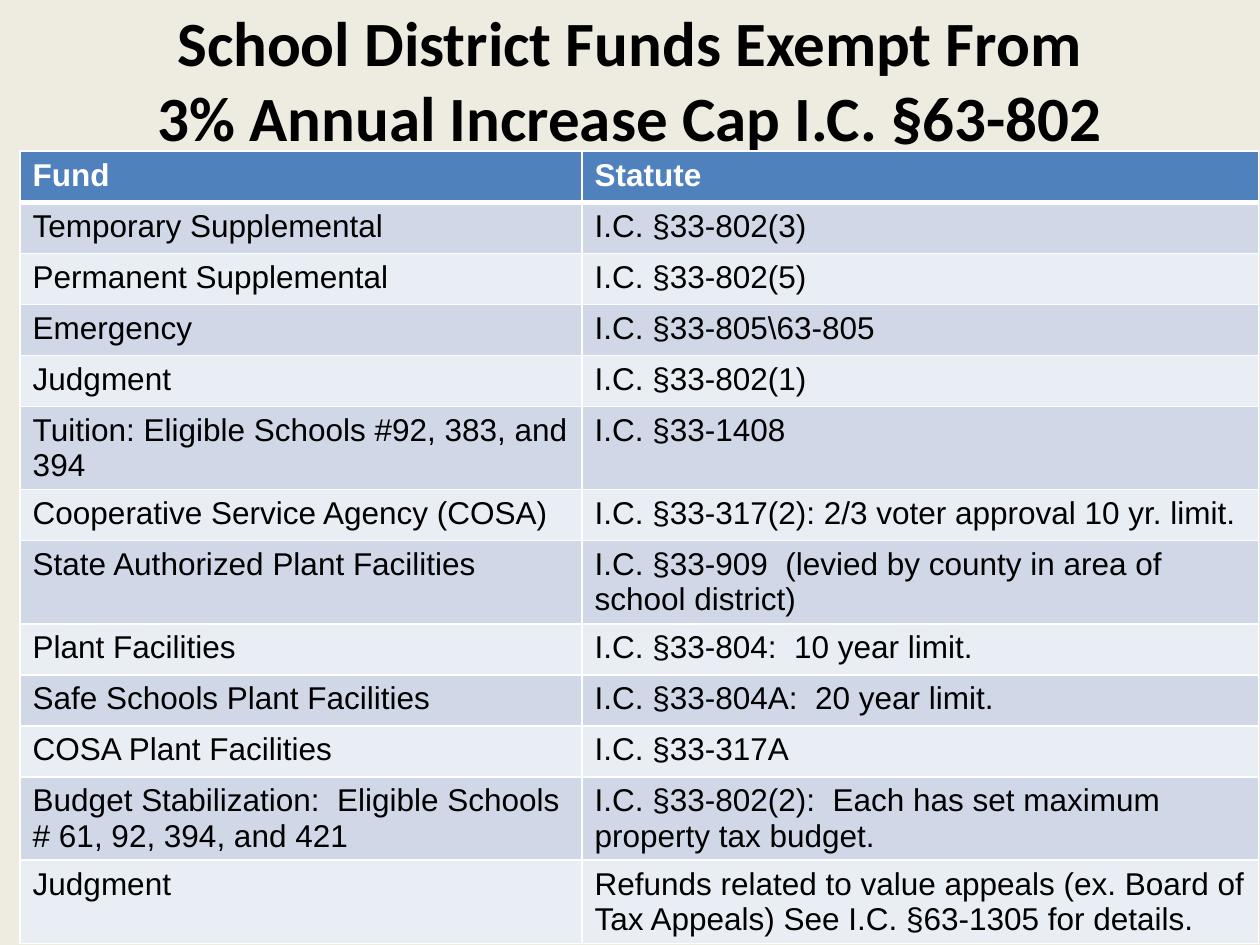
from lxml.etree import SubElement
from pptx import Presentation
from pptx.dml.color import RGBColor
from pptx.enum.text import MSO_ANCHOR, PP_ALIGN
from pptx.oxml.ns import qn
from pptx.util import Inches, Pt

BACKGROUND = RGBColor(0xEE, 0xEC, 0xE1)
BLACK = RGBColor(0x00, 0x00, 0x00)
WHITE = RGBColor(0xFF, 0xFF, 0xFF)
HEADER_BLUE = RGBColor(0x4F, 0x81, 0xBD)
BANDS = (RGBColor(0xE9, 0xED, 0xF4), RGBColor(0xD0, 0xD8, 0xE8))

TITLE_FONT = {"name": "Calibri", "size": Pt(36), "bold": True}
HEADER_FONT = {"name": "Arial", "size": Pt(18), "bold": True}
BODY_FONT = {"name": "Arial", "size": Pt(18), "bold": False}

TITLE_LINES = ("School District Funds Exempt From", "3% Annual Increase Cap I.C. §63-802")
FUNDS = (
    ("Fund", "Statute"),
    ("Temporary Supplemental", "I.C. §33-802(3)"),
    ("Permanent Supplemental", "I.C. §33-802(5)"),
    ("Emergency", r"I.C. §33-805\63-805"),
    ("Judgment", "I.C. §33-802(1)"),
    ("Tuition: Eligible Schools #92, 383, and 394", "I.C. §33-1408"),
    ("Cooperative Service Agency (COSA)", "I.C. §33-317(2): 2/3 voter approval 10 yr. limit."),
    ("State Authorized Plant Facilities",
     "I.C. §33-909  (levied by county in area of school district)"),
    ("Plant Facilities", "I.C. §33-804:  10 year limit."),
    ("Safe Schools Plant Facilities", "I.C. §33-804A:  20 year limit."),
    ("COSA Plant Facilities", "I.C. §33-317A"),
    ("Budget Stabilization:  Eligible Schools # 61, 92, 394, and 421",
     "I.C. §33-802(2):  Each has set maximum property tax budget."),
    ("Judgment",
     "Refunds related to value appeals (ex. Board of Tax Appeals) "
     "See I.C. §63-1305 for details."),
)
COLUMN_WIDTHS = (Inches(4.46), Inches(5.37))
ROW_HEIGHT = Inches(5.27) // len(FUNDS)
TWO_LINE_ROW_HEIGHT = Inches(0.66)
TWO_LINE_ROWS = (5, 7, 11, 12)
TWO_LINE_BOTTOM_MARGIN = Inches(0.01)


def format_font(font, values, color):
    for name, value in values.items():
        setattr(font, name, value)
    font.color.rgb = color


def add_title(slide, left, top, width, height):
    frame = slide.shapes.add_textbox(left, top, width, height).text_frame
    frame.word_wrap = True
    frame.vertical_anchor = MSO_ANCHOR.MIDDLE
    paragraph = frame.paragraphs[0]
    paragraph.alignment = PP_ALIGN.CENTER
    for index, line in enumerate(TITLE_LINES):
        if index:
            paragraph.add_line_break()
        run = paragraph.add_run()
        run.text = line
        format_font(run.font, TITLE_FONT, BLACK)


def set_borders(cell, widths):
    """Draw white borders; widths maps a side (L, R, T, B) to its line width."""
    properties = cell._tc.get_or_add_tcPr()
    for side, width in widths.items():
        line = SubElement(properties, qn(f"a:ln{side}"), w=str(width))
        fill = SubElement(line, qn("a:solidFill"))
        SubElement(fill, qn("a:srgbClr"), val=str(WHITE))


def add_funds_table(slide, left, top, width, height):
    graphic_frame = slide.shapes.add_table(
        len(FUNDS), len(COLUMN_WIDTHS), left, top, width, height)
    table = graphic_frame.table
    for column, column_width in zip(table.columns, COLUMN_WIDTHS):
        column.width = column_width
    for row_index, texts in enumerate(FUNDS):
        is_header = row_index == 0
        is_two_line = row_index in TWO_LINE_ROWS
        table.rows[row_index].height = TWO_LINE_ROW_HEIGHT if is_two_line else ROW_HEIGHT
        fill_color = HEADER_BLUE if is_header else BANDS[row_index % 2]
        font_values, font_color = (HEADER_FONT, WHITE) if is_header else (BODY_FONT, BLACK)
        borders = {"L": Pt(1), "R": Pt(1),
                   "T": Pt(3) if row_index == 1 else Pt(1),
                   "B": Pt(3) if is_header else Pt(1)}
        for column_index, text in enumerate(texts):
            cell = table.cell(row_index, column_index)
            cell.text = text
            if is_two_line:
                cell.margin_bottom = TWO_LINE_BOTTOM_MARGIN
            format_font(cell.text_frame.paragraphs[0].runs[0].font, font_values, font_color)
            set_borders(cell, borders)
            cell.fill.solid()
            cell.fill.fore_color.rgb = fill_color
    graphic_frame.height = height


def main():
    presentation = Presentation()
    presentation.slide_width = Inches(10)
    presentation.slide_height = Inches(7.5)
    slide = presentation.slides.add_slide(presentation.slide_layouts[6])
    slide.background.fill.solid()
    slide.background.fill.fore_color.rgb = BACKGROUND
    add_title(slide, Inches(0.25), Inches(0), Inches(9.5), Inches(1.25))
    add_funds_table(slide, Inches(0.16), Inches(1.2), sum(COLUMN_WIDTHS), Inches(6.16))
    presentation.save("out.pptx")


if __name__ == "__main__":
    main()
